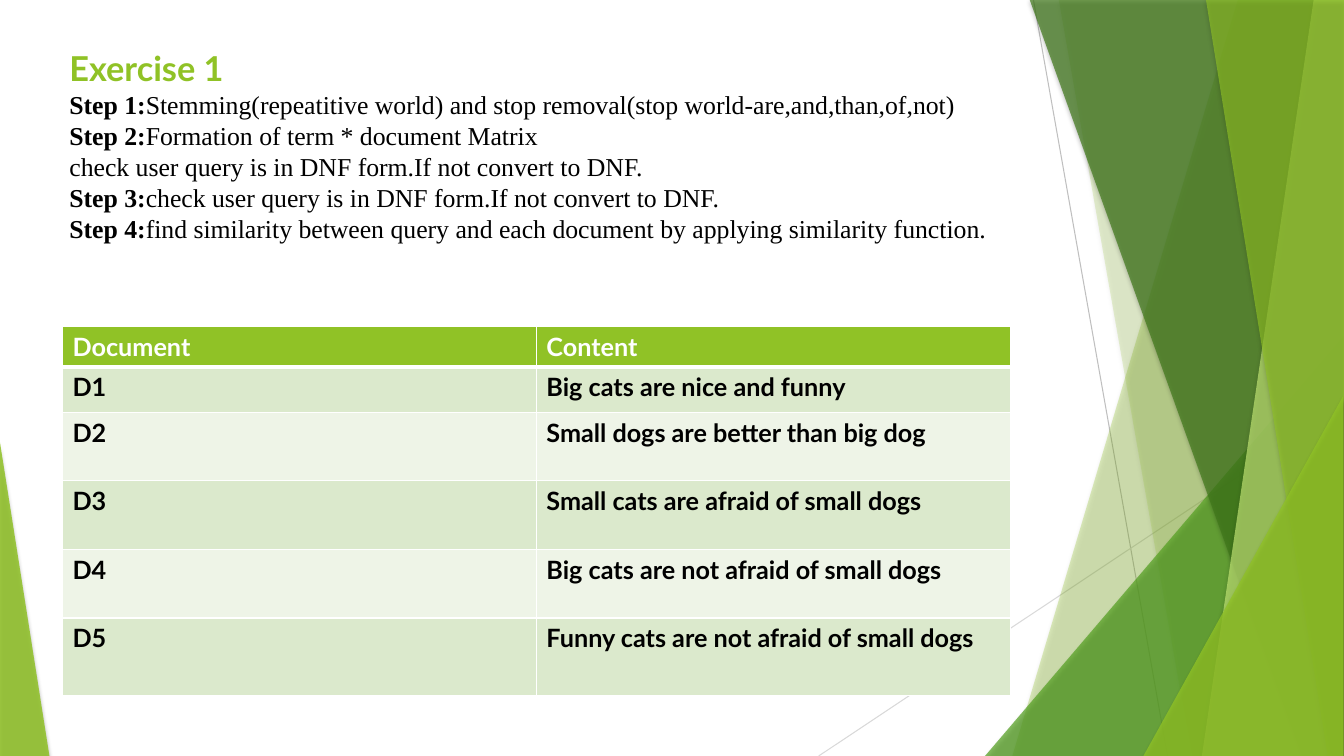
from lxml import etree
from pptx import Presentation
from pptx.dml.color import RGBColor
from pptx.enum.shapes import MSO_CONNECTOR, MSO_SHAPE
from pptx.enum.text import MSO_ANCHOR
from pptx.oxml import parse_xml
from pptx.oxml.ns import nsdecls, qn
from pptx.util import Inches, Pt

STRAIGHT = MSO_CONNECTOR.STRAIGHT
TRIANGLE = MSO_SHAPE.ISOSCELES_TRIANGLE
TOP = MSO_ANCHOR.TOP
WIDTH, HEIGHT = 13.33, 7.5
COLORS = {
    "lime": "90C226", "green": "54A021", "forest": "3F7819", "pale": "C0E474",
    "white": "FFFFFF", "black": "000000", "band": "DBE9CC", "light band": "EEF4E7",
    "gray": "BFBFBF", "light gray": "D9D9D9",
}


class ExerciseSlide:
    heading_font = "Lato"
    body_font = "Times New Roman"

    def __init__(self, slide):
        self.slide = slide
        self.shapes = slide.shapes

    def color(self, name):
        return RGBColor.from_string(COLORS[name])

    def line(self, start, end, color):
        line = self.shapes.add_connector(STRAIGHT, *map(Inches, start + end))
        line.line.color.rgb = self.color(color)
        line.line.width = Pt(0.75)
        etree.SubElement(line._element.spPr, qn("a:effectLst"))

    def glass(self, facet, color, opacity):
        facet.fill.solid()
        facet.fill.fore_color.rgb = self.color(color)
        facet.line.fill.background()
        properties = facet._element.spPr
        tint = properties.find(qn("a:solidFill"))[0]
        etree.SubElement(tint, qn("a:alpha"), val=str(opacity * 1000))
        properties.append(parse_xml(
            f'<a:effectLst {nsdecls("a")}><a:outerShdw blurRad="{Pt(3)}" dist="{Pt(2)}" '
            f'dir="5400000" rotWithShape="0"><a:srgbClr val="{COLORS["black"]}">'
            '<a:alpha val="35000"/></a:srgbClr></a:outerShdw></a:effectLst>'))

    def blade(self, top_x, bottom_x, color, opacity):
        outline = self.shapes.build_freeform(Inches(top_x), Inches(-0.01))
        corners = [(WIDTH, -0.01), (WIDTH, HEIGHT), (bottom_x, HEIGHT)]
        outline.add_line_segments([(Inches(x), Inches(y)) for x, y in corners])
        self.glass(outline.convert_to_shape(), color, opacity)

    def triangle(self, left, top, width, peak, color, opacity):
        box = map(Inches, (left, top, width, HEIGHT - top))
        triangle = self.shapes.add_shape(TRIANGLE, *box)
        triangle.adjustments[0] = peak
        self.glass(triangle, color, opacity)

    def run(self, paragraph, text, font, size, color, bold):
        run = paragraph.add_run()
        run.text = text
        run.font.name = font
        run.font.size = Pt(size)
        run.font.bold = bold
        run.font.color.rgb = self.color(color)

    def steps(self, box, title, steps):
        frame = self.shapes.add_textbox(*map(Inches, box)).text_frame
        frame.word_wrap = True
        frame.vertical_anchor = TOP
        self.run(frame.paragraphs[0], title, self.heading_font, 24.5, "lime", True)
        for label, instruction in steps:
            paragraph = frame.add_paragraph()
            paragraph.line_spacing = Pt(22.1)
            if label:
                self.run(paragraph, label, self.body_font, 18.4, "black", True)
            self.run(paragraph, instruction, self.body_font, 18.4, "black", False)

    def border(self, cell, side, width):
        return parse_xml(
            f'<a:{side} {nsdecls("a")} w="{Pt(width)}"><a:solidFill>'
            f'<a:srgbClr val="{COLORS["white"]}"/></a:solidFill></a:{side}>')

    def table(self, left, top, column_width, heights, rows):
        columns = len(rows[0])
        table = self.shapes.add_table(
            len(rows), columns, Inches(left), Inches(top),
            Inches(column_width * columns), Inches(sum(heights))).table
        for column in table.columns:
            column.width = Inches(column_width)
        for r, (height, row) in enumerate(zip(heights, rows)):
            table.rows[r].height = Inches(height)
            fill = "lime" if r == 0 else "band" if r % 2 else "light band"
            for c, text in enumerate(row):
                cell = table.cell(r, c)
                cell.fill.solid()
                cell.fill.fore_color.rgb = self.color(fill)
                self.run(cell.text_frame.paragraphs[0], text, self.heading_font, 18,
                         "black" if r else "white", True)
                widths = {"lnL": 0.96, "lnR": 0.96,
                          "lnT": 3 if r == 1 else 0.96, "lnB": 0.96 if r else 3}
                for i, (side, width) in enumerate(widths.items()):
                    cell._tc.tcPr.insert(i, self.border(cell, side, width))


def main():
    presentation = Presentation()
    presentation.slide_width = Inches(WIDTH)
    presentation.slide_height = Inches(HEIGHT)
    exercise = ExerciseSlide(presentation.slides.add_slide(presentation.slide_layouts[6]))

    exercise.line((10.25, 0), (11.58, HEIGHT), "gray")
    exercise.line((WIDTH, 4.03), (8.12, HEIGHT), "light gray")
    exercise.blade(12.28, 10.04, "lime", 30)
    exercise.blade(10.5, 11.82, "lime", 20)
    exercise.triangle(9.77, 3.33, 3.56, 1, "green", 72)
    exercise.blade(10.21, 12.91, "forest", 70)
    exercise.blade(13.03, 11.92, "pale", 70)
    exercise.blade(11.96, 13.17, "lime", 65)
    exercise.triangle(11.34, 3.93, 1.98, 1, "lime", 80)
    exercise.triangle(0, 4.39, 0.49, 0, "lime", 85)

    exercise.steps((0.59, 0.42, 9.4, 2.53), "Exercise 1", [
        ("Step 1:", "Stemming(repeatitive world) and stop removal(stop world-are,and,than,of,not)"),
        ("Step 2:", "Formation of term * document Matrix"),
        ("", "check user query is in DNF form.If not convert to DNF."),
        ("Step 3:", "check user query is in DNF form.If not convert to DNF."),
        ("Step 4:", "find similarity between query and each document by applying similarity function."),
    ])
    exercise.table(0.62, 3.24, 4.7, [0.39, 0.45, 0.68, 0.68, 0.68, 0.77], [
        ("Document", "Content"),
        ("D1", "Big cats are nice and funny"),
        ("D2", "Small dogs are better than big dog"),
        ("D3", "Small cats are afraid of small dogs"),
        ("D4", "Big cats are not afraid of small dogs"),
        ("D5", "Funny cats are not afraid of small dogs"),
    ])
    presentation.save("out.pptx")


if __name__ == "__main__":
    main()
